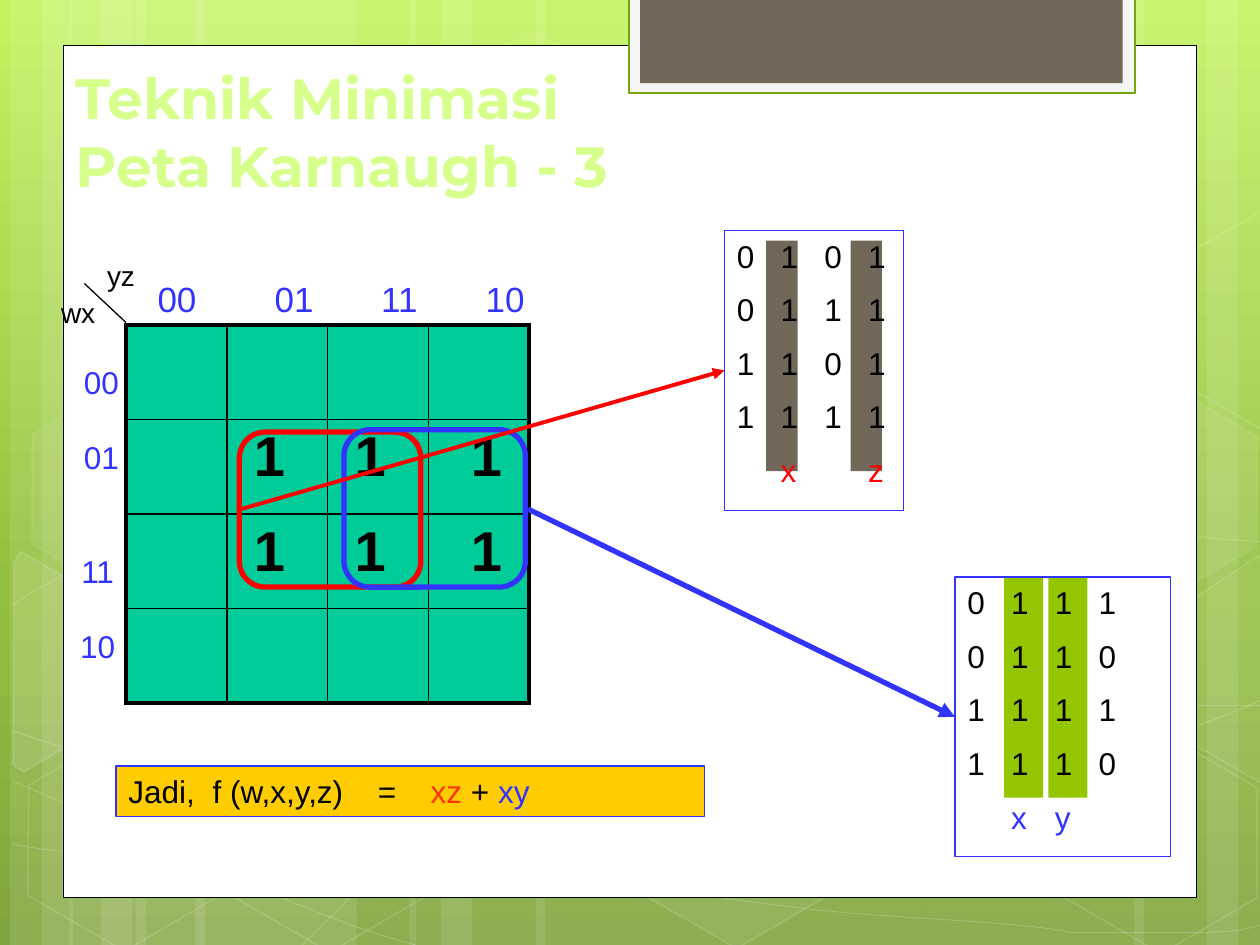
from copy import deepcopy
from math import cos, radians, sin
from lxml.etree import SubElement
from pptx import Presentation
from pptx.dml.color import RGBColor
from pptx.enum.shapes import MSO_CONNECTOR, MSO_SHAPE
from pptx.enum.text import MSO_ANCHOR, PP_ALIGN
from pptx.oxml.ns import qn
from pptx.util import Emu, Inches, Pt

UNIT = Inches(0.1)
TILT = 30
WHITE = RGBColor(0xFF, 0xFF, 0xFF)
BLACK = RGBColor(0, 0, 0)
BLUE = RGBColor(0x33, 0x33, 0xFF)
RED = RGBColor(0xFF, 0, 0)
ORANGE = RGBColor(0xFF, 0x33, 0)
GOLD = RGBColor(0xFF, 0xCC, 0)
TEAL = RGBColor(0, 0xCC, 0x99)
GREEN = RGBColor(0x94, 0xC6, 0)
OLIVE = RGBColor(0x74, 0xA5, 0x10)
BROWN = RGBColor(0x71, 0x68, 0x5A)
PALE = RGBColor(0xF5, 0xF5, 0xF5)
LIME = RGBColor(0xD6, 0xFF, 0x8C)
SKY = [(0, RGBColor(0xC3, 0xF3, 0x5F)), (0.62, RGBColor(0x93, 0xBF, 0x3F)),
       (1, RGBColor(0x81, 0xA5, 0x3E))]

STRIPS = [(10.8, 17.5), (0.8, 5), (3.3, 8.3), (15.5, 17.5), (5.5, 5), (8, 8.3),
          (73.3, 17.5), (95.8, 5), (90, 8.3), (42.5, 30.8), (32.5, 5), (35, 8.3)]
WAVES = [
    [(0.7, 67.3), (6.1, 67.6), (11.5, 67.9), (19, 67.8), (26.5, 67.7), (35.8, 67.5),
     (45.8, 66.5), (55.8, 65.5), (70, 63.6), (79.2, 61.7), (88.3, 59.8), (97.7, 56.8), (100.7, 55.1)],
    [(0.7, 47.7), (3.6, 46.1), (6.5, 44.6), (12.1, 43.1), (17.8, 41.6), (25.9, 39.4),
     (34.7, 38.7), (43.6, 38), (54.4, 37.9), (65.4, 38.7), (76.4, 39.5), (94.7, 42.6), (100.7, 43.4)],
    [(0.6, 61.7), (12.7, 67.2), (24.7, 72.7), (33.4, 74.9)],
    [(0.7, 57.8), (3.8, 58.9), (7, 60), (12.8, 61.6), (18.6, 63.1), (27.3, 65.6), (35.7, 67.3),
     (44, 69), (54.5, 70.8), (62.8, 71.8), (71.1, 72.9), (80, 73.3), (85.3, 73.6),
     (90.5, 74), (91.9, 73.8), (94.5, 73.8), (97.1, 73.7), (98.9, 73.5), (100.7, 73.4)],
    [(24.2, 74.9), (26, 72.9), (27.8, 70.9), (30.2, 69.1), (32.6, 67.3), (36, 65.3), (38.8, 63.9),
     (41.6, 62.5), (43.3, 61.9), (47, 60.9), (50.6, 59.9), (57.3, 58.5), (60.8, 57.8),
     (64.4, 57.1), (64.9, 57.1), (68, 56.9), (71.1, 56.6), (76, 56.3), (79.4, 56.2),
     (82.9, 56.1), (88.6, 56.2), (88.6, 56.2), (88.6, 56.2), (95.3, 56.2), (95.3, 56.2),
     (97.1, 56.3), (98.8, 56.4), (99.7, 56.5), (100.6, 56.6), (100.3, 56.5), (100.6, 56.6)],
]
HEXAGONS = [(33.4, 3.6, 4, 8), (49.7, 58.9, 6, 12), (1.1, 59.1, 0, 12), (1.4, 31.2, 7, 8),
            (17.4, 59.2, 0, 12), (75.3, 45.3, 10, 12), (83.4, 59.3, 0, 12), (83.4, 31.4, 7, 8)]
CUT_HEXAGONS = [
    ([(0.8, 44.5), (1.9, 43.8), (9.6, 48.2), (9.5, 57), (2, 61.4), (0.8, 60.7)], (3.6, 53.5), 10),
    ([(92.6, 48.5), (100.1, 44.1), (100.9, 44.6), (100.9, 61.3), (100.2, 61.7), (92.6, 57.3)],
     (98.5, 52), 4),
    ([(92.6, 20.7), (100.1, 16.3), (101, 16.8), (100.9, 33.5), (100.2, 33.9), (92.6, 29.5)],
     (98.5, 24.1), 0),
]


def grid(*cells):
    return [Emu(round(n * UNIT)) for n in cells]


def apply(obj, values):
    for name, value in values.items():
        setattr(obj, name, value)


def fade(fill, percent):
    color = fill._xPr.find(".//" + qn("a:srgbClr"))
    SubElement(color, qn("a:alpha"), val=str(percent * 1000))


def paint(sp, fill=None, line=None, width=0.75, fill_alpha=100, line_alpha=100):
    sp.shadow.inherit = False
    if fill is None or fill_alpha == 0:
        sp.fill.background()
    else:
        sp.fill.solid()
        sp.fill.fore_color.rgb = fill
        if fill_alpha < 100:
            fade(sp.fill, fill_alpha)
    if line is None:
        sp.line.fill.background()
        return
    sp.line.color.rgb = line
    sp.line.width = Pt(width)
    if line_alpha < 100:
        fade(sp.line.fill, line_alpha)


def shape(s, cells, kind=MSO_SHAPE.RECTANGLE, **look):
    sp = s.shapes.add_shape(kind, *grid(*cells))
    paint(sp, **look)
    return sp


def outline(s, points, close, **look):
    builder = s.shapes.build_freeform(*points[0], scale=UNIT)
    builder.add_line_segments(points[1:], close=close)
    sp = builder.convert_to_shape()
    paint(sp, **look)
    return sp


def wave(s, knots):
    sp = outline(s, knots, False, line=WHITE, width=0.5, line_alpha=20)
    track = sp._element.find(".//" + qn("a:path"))
    segments = track.findall(qn("a:lnTo"))
    for i in range(0, len(segments), 3):
        curve = SubElement(track, qn("a:cubicBezTo"))
        for segment in segments[i:i + 3]:
            curve.append(segment[0])
            track.remove(segment)


def turn_back(points, center):
    cx, cy = center
    c, n = cos(radians(TILT)), sin(radians(TILT))
    return [(cx + (x - cx) * c + (y - cy) * n, cy - (x - cx) * n + (y - cy) * c)
            for x, y in points]


def line(s, start, end, color, width, arrow=False):
    c = s.shapes.add_connector(MSO_CONNECTOR.STRAIGHT, *grid(*start, *end))
    c.line.color.rgb = color
    c.line.width = Pt(width)
    if arrow:
        SubElement(c.line._get_or_add_ln(), qn("a:tailEnd"), type="triangle")
    SubElement(c._element.spPr, qn("a:effectLst"))


def write(tf, lines, size, align=PP_ALIGN.LEFT, gap=0, tabs=(), font="Arial", bold=False):
    apply(tf, {"word_wrap": True, "vertical_anchor": MSO_ANCHOR.TOP})
    for i, runs in enumerate(lines):
        p = tf.add_paragraph() if i else tf.paragraphs[0]
        apply(p, {"alignment": align, "space_before": Pt(gap if i else 0)})
        if tabs:
            stops = SubElement(p._p.get_or_add_pPr(), qn("a:tabLst"))
            for n in tabs:
                SubElement(stops, qn("a:tab"), pos=str(grid(n)[0]), algn="l")
        for text, color in runs:
            for k, part in enumerate(text.split("\n")):
                if k:
                    p.add_line_break()
                r = p.add_run()
                r.text = part
                apply(r.font, {"size": Pt(size), "name": font, "bold": bold})
                r.font.color.rgb = color


def label(s, cells, lines, size, color, **style):
    tf = s.shapes.add_textbox(*grid(*cells)).text_frame
    write(tf, [[(text, color)] for text in lines], size, **style)
    return tf


def background(s):
    fill = s.background.fill
    fill.gradient()
    fill.gradient_angle = 270
    stops = s.element.find(".//" + qn("a:gsLst"))
    stops.insert(1, deepcopy(stops[0]))
    for stop, (position, color) in zip(fill.gradient_stops, SKY):
        stop.position = position
        stop.color.rgb = color


def backdrop(s):
    for left, width in STRIPS:
        shape(s, (left, 0, width, 75), fill=WHITE, fill_alpha=10)
    for knots in WAVES:
        wave(s, knots)
    for left, top, fill_alpha, line_alpha in HEXAGONS:
        sp = shape(s, (left, top, 17.5, 15.2), MSO_SHAPE.HEXAGON, fill=WHITE, line=WHITE,
                   width=1, fill_alpha=fill_alpha, line_alpha=line_alpha)
        sp.adjustments[0] = 0.285
        sp.rotation = TILT
    for points, center, alpha in CUT_HEXAGONS:
        sp = outline(s, turn_back(points, center), True, fill=WHITE, line=WHITE, width=1,
                     fill_alpha=alpha, line_alpha=12)
        sp.rotation = TILT
    shape(s, (5, 3.6, 90, 67.6), fill=WHITE, line=BLACK, width=0.5)
    shape(s, (49.9, -0.2, 40.2, 7.6), fill=PALE, line=OLIVE, width=1.25)
    shape(s, (50.8, -0.2, 38.3, 6.8), fill=BROWN)


def border(cell, side, width):
    ln = SubElement(cell._tc.get_or_add_tcPr(), qn("a:" + side), w=str(Pt(width)))
    SubElement(SubElement(ln, qn("a:solidFill")), qn("a:srgbClr"), val=str(BLACK))


def karnaugh_map(s, size=4):
    table = s.shapes.add_table(size, size, *grid(10, 25.8, 32, 30)).table
    apply(table, {"first_row": False, "horz_banding": False})
    last = size - 1
    for row in range(size):
        for col in range(size):
            cell = table.cell(row, col)
            edges = {"lnL": col == 0, "lnR": col == last, "lnT": row == 0, "lnB": row == last}
            for side, outer in edges.items():
                border(cell, side, 2.25 if outer else 1)
            cell.fill.solid()
            cell.fill.fore_color.rgb = TEAL
            if row in (1, 2) and col:
                text = " 1" if col == last else "1 "
                write(cell.text_frame, [[(text, BLACK)]], 32, align=PP_ALIGN.CENTER, bold=True)


def minterms(s, cells, rows, result, color, bars, bar_color):
    for bar in bars:
        shape(s, bar, fill=bar_color)
    sp = shape(s, cells, line=BLUE)
    lines = [[("\t".join(row), BLACK)] for row in rows] + [[(result, color)]]
    write(sp.text_frame, lines, 18, gap=9, tabs=(3.47, 6.94, 10.41))


def loop(s, cells, color):
    shape(s, cells, MSO_SHAPE.ROUNDED_RECTANGLE, line=color, width=3)


def main():
    prs = Presentation()
    prs.slide_width, prs.slide_height = grid(100, 75)
    s = prs.slides.add_slide(prs.slide_layouts[6])
    background(s)
    backdrop(s)
    title = label(s, (5, 9.15, 76.8, 7.1), ["Teknik Minimasi \nPeta Karnaugh - 3"],
                  32.4, LIME, font="Montserrat", bold=True)
    title.vertical_anchor = MSO_ANCHOR.BOTTOM
    karnaugh_map(s)
    header = label(s, (10, 21.5, 32.9, 4.3), ["00\t01\t11\t10"], 20, BLUE, tabs=(9.3, 17.75, 26.05))
    header.margin_left = grid(2.5)[0]
    center = {"align": PP_ALIGN.CENTER}
    label(s, (5.3, 28.3, 5.5, 10), ["00", "01"], 18, BLUE, gap=21.5, **center)
    line(s, (10, 25.6), (6.7, 22.5), BLACK, 0.75)
    label(s, (6.7, 20, 5.8, 3.7), ["yz"], 16, BLACK, **center)
    label(s, (3.3, 23, 5.8, 3.7), ["wx"], 16, BLACK, **center)
    loop(s, (19, 34.3, 14.4, 12.3), RED)
    label(s, (5, 43.3, 5.5, 10), ["11", "10"], 18, BLUE, gap=21.5, **center)
    loop(s, (27.3, 34.1, 14.4, 12.5), BLUE)
    minterms(s, (57.5, 18.3, 14.2, 22.2), ("0101", "0111", "1101", "1111"), "\tx\t\tz", RED,
             [(left, 19.1, 2.5, 18.3) for left in (67.5, 60.8)], BROWN)
    line(s, (18.8, 40.5), (57.5, 29.4), RED, 2.25, arrow=True)
    minterms(s, (75.8, 45.8, 17.1, 22.2), ("0111", "0110", "1111", "1110"), "\tx\ty", BLUE,
             [(left, 45.8, 3.1, 17.5) for left in (83.2, 79.7)], GREEN)
    line(s, (41.9, 40.4), (75.8, 56.9), BLUE, 3, arrow=True)
    answer = shape(s, (9.2, 60.8, 46.7, 4), fill=GOLD, line=BLUE)
    write(answer.text_frame, [[("Jadi,\tf (w,x,y,z)\t=\t", BLACK), ("xz ", ORANGE),
                               ("+ ", BLACK), ("xy", BLUE)]], 18, tabs=(6.7, 19.8, 24))
    prs.save("out.pptx")


if __name__ == "__main__":
    main()
